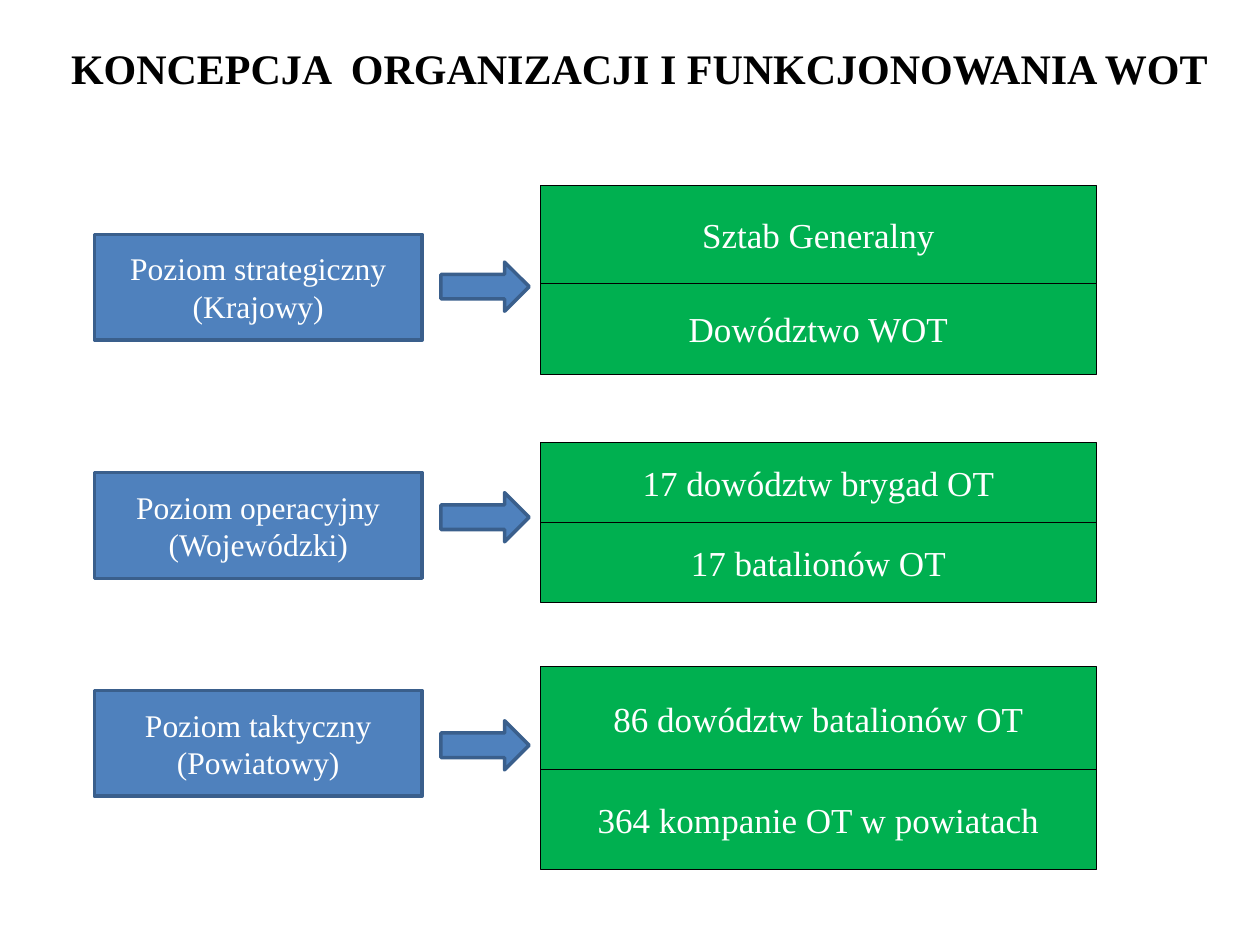
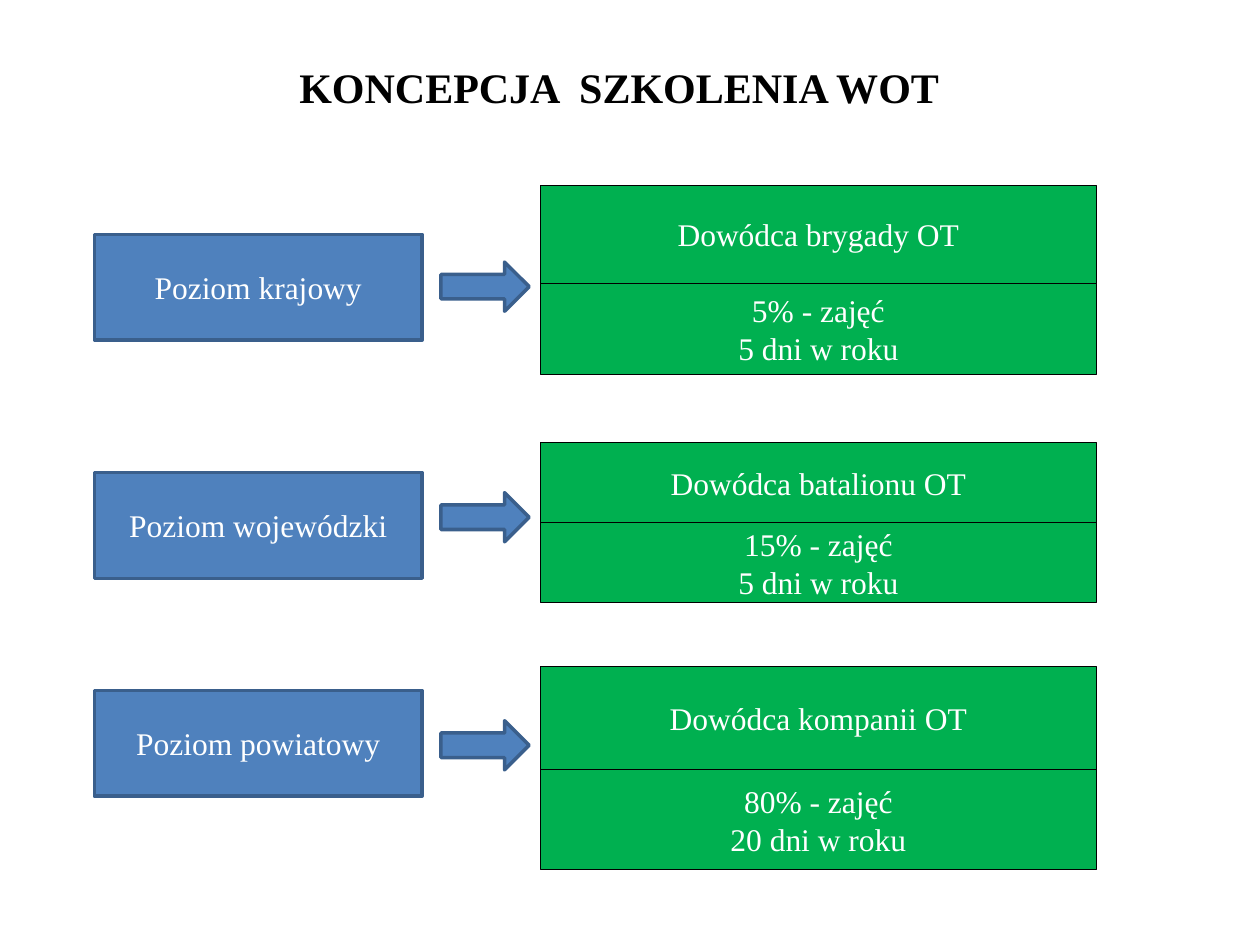
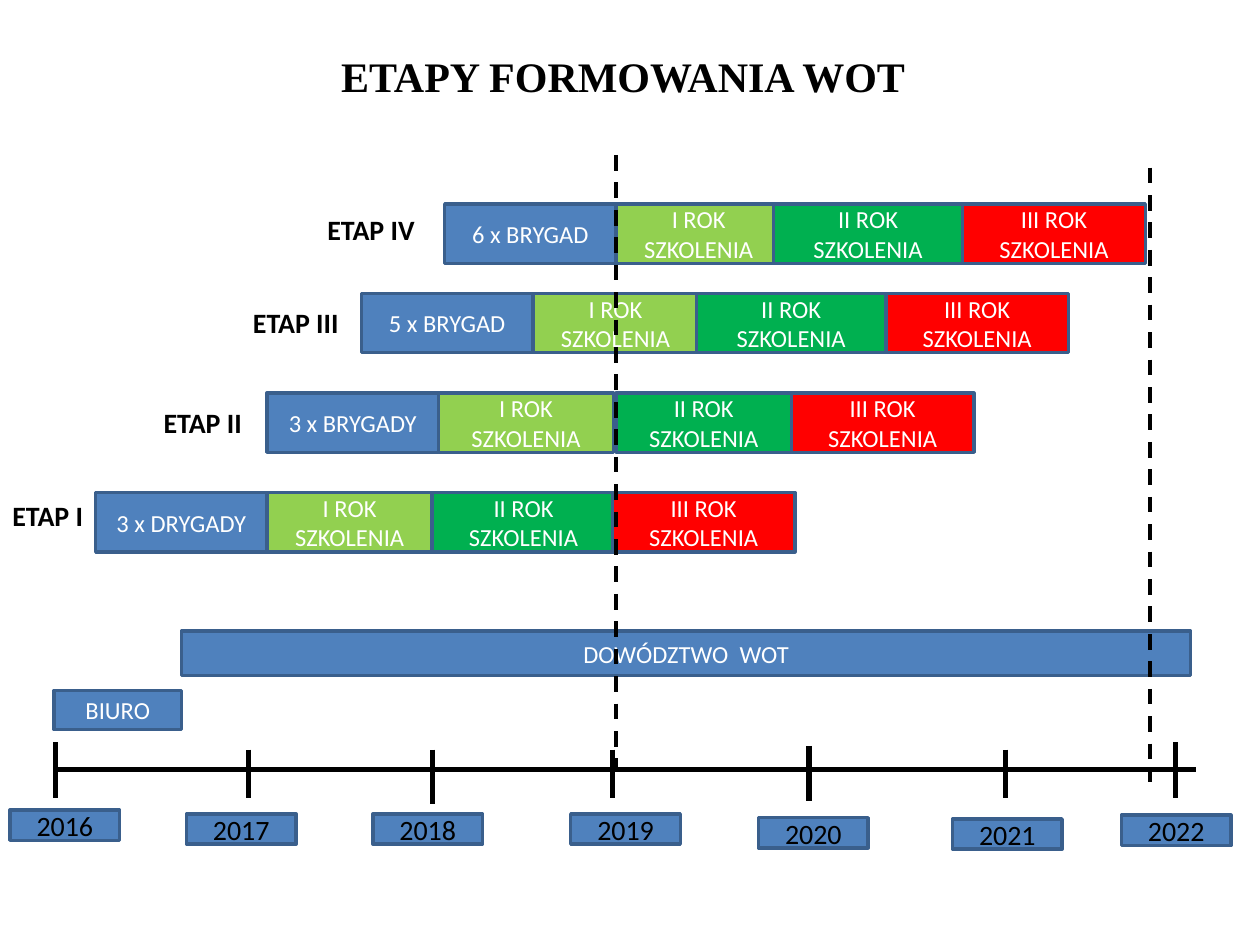
import pptx
import pptx.util
import pptx.dml.color
import pptx.enum.dml
import pptx.enum.shapes
import pptx.enum.text
import pptx.oxml.ns
from lxml import etree

Inches = pptx.util.Inches
Pt = pptx.util.Pt
SHAPES = pptx.enum.shapes.MSO_SHAPE
ALIGN = pptx.enum.text.PP_ALIGN
ANCHOR = pptx.enum.text.MSO_ANCHOR

# Shared look
BLUE, BLUE_EDGE = "4F81BD", "3A5F8C"
GREEN, LIME, RED = "00B050", "92D050", "FF0000"
WHITE, BLACK = "FFFFFF", "000000"
SERIF, SANS = "Times New Roman", "Calibri"


def rgb(value):
    return pptx.dml.color.RGBColor.from_string(value)


def write_text(shape, text, *, size, font=SANS, color=WHITE, bold=False,
               align=ALIGN.CENTER, anchor=ANCHOR.MIDDLE, wrap=True):
    frame = shape.text_frame
    frame.word_wrap = wrap
    frame.auto_size = pptx.enum.text.MSO_AUTO_SIZE.NONE
    frame.vertical_anchor = anchor
    frame.text = text
    for paragraph in frame.paragraphs:
        paragraph.alignment = align
        for run in paragraph.runs:
            run.font.name = font
            run.font.size = Pt(size)
            run.font.bold = bold
            run.font.color.rgb = rgb(color)


def add_block(slide, box, text="", kind=SHAPES.RECTANGLE, fill=BLUE,
              edge=BLUE_EDGE, edge_width=2, **text_format):
    block = slide.shapes.add_shape(kind, *map(Inches, box))
    block.shadow.inherit = False
    block.fill.solid()
    block.fill.fore_color.rgb = rgb(fill)
    block.line.color.rgb = rgb(edge)
    block.line.width = Pt(edge_width)
    if text:
        write_text(block, text, **text_format)


def add_line(slide, start, end, width=3, dashed=False):
    line = slide.shapes.add_connector(
        pptx.enum.shapes.MSO_CONNECTOR.STRAIGHT, *map(Inches, start + end))
    line.line.color.rgb = rgb(BLACK)
    line.line.width = Pt(width)
    if dashed:
        line.line.dash_style = pptx.enum.dml.MSO_LINE.DASH
    etree.SubElement(line._element.spPr, pptx.oxml.ns.qn("a:effectLst"))


def add_titled_slide(deck, title, box):
    slide = deck.slides.add_slide(deck.slide_layouts[5])
    heading = slide.shapes.title
    heading.left, heading.top, heading.width, heading.height = map(Inches, box)
    write_text(heading, title, size=24, font=SERIF, color=BLACK, bold=True,
               anchor=ANCHOR.TOP)
    return slide


# Levels of command: level box, arrow and two stacked green boxes.
# Each row: top, level offset, arrow offset, heights of the green boxes
LEVEL_ROWS = [
    (1.47, 0.39, 0.61, (0.78, 0.72)),
    (3.51, 0.24, 0.40, (0.64, 0.63)),
    (5.29, 0.19, 0.43, (0.82, 0.79)),
]


def draw_level(slide, left, row, level, details, detail_size):
    top, level_offset, arrow_offset, heights = row
    add_block(slide, (left, top + level_offset, 2.6, 0.84), level,
              size=18, font=SERIF)
    add_block(slide, (left + 2.75, top + arrow_offset, 0.7, 0.39),
              kind=SHAPES.RIGHT_ARROW)
    for detail, height in zip(details, heights):
        add_block(slide, (left + 3.54, top, 4.41, height), detail, fill=GREEN,
                  edge=BLACK, edge_width=0.75, size=detail_size, font=SERIF,
                  wrap=False)
        top += height


def build_levels_slide(deck, title, title_box, levels, detail_size):
    slide = add_titled_slide(deck, title, title_box)
    for row, (level, *details) in zip(LEVEL_ROWS, levels):
        draw_level(slide, 0.75, row, level, details, detail_size)


ORGANISATION = [
    ("Poziom strategiczny\n(Krajowy)", "Sztab Generalny", "Dowództwo WOT"),
    ("Poziom operacyjny\n(Wojewódzki)", "17 dowództw brygad OT",
     "17 batalionów OT"),
    ("Poziom taktyczny\n(Powiatowy)", "86 dowództw batalionów OT",
     "364 kompanie OT w powiatach"),
]
TRAINING = [
    ("Poziom krajowy", "Dowódca brygady OT", "5% - zajęć\n5 dni w roku"),
    ("Poziom wojewódzki", "Dowódca batalionu OT",
     "15% - zajęć\n5 dni w roku"),
    ("Poziom powiatowy", "Dowódca kompanii OT",
     "80% - zajęć\n20 dni w roku"),
]

# Stages: name, name position, brigades, bar position,
# then offset and width of each training year
STAGES = [
    ("ETAP I", (0, 3.91), "3 x DRYGADY", (0.76, 3.91),
     [(1.36, 1.31), (2.67, 1.45), (4.10, 1.45)]),
    ("ETAP II", (1.2, 3.17), "3 x BRYGADY", (2.12, 3.12),
     [(1.36, 1.39), (2.77, 1.39), (4.16, 1.45)]),
    ("ETAP III", (1.91, 2.38), "5 x BRYGAD", (2.87, 2.33),
     [(1.36, 1.31), (2.66, 1.5), (4.16, 1.45)]),
    ("ETAP IV", (2.5, 1.64), "6 x BRYGAD", (3.53, 1.62),
     [(1.36, 1.31), (2.61, 1.5), (4.11, 1.45)]),
]
TRAINING_YEARS = [("I", LIME), ("II", GREEN), ("III", RED)]

# Time axis: year, tick x, tick top and bottom, year box position
YEARS = [
    (2016, 0.44, 5.89, 6.33, (0.08, 6.43)),
    (2017, 1.97, 5.95, 6.33, (1.48, 6.46)),
    (2018, 3.43, 5.95, 6.38, (2.96, 6.46)),
    (2019, 4.86, 5.95, 6.33, (4.53, 6.46)),
    (2020, 6.42, 5.92, 6.36, (6.02, 6.49)),
    (2021, 7.98, 5.95, 6.33, (7.56, 6.5)),
    (2022, 9.33, 5.89, 6.33, (8.9, 6.47)),
]


def draw_stage_bar(slide, position, brigades, spans):
    left, top = position
    height = 0.47
    add_block(slide, (left, top, 1.36, height), brigades, size=14)
    for (numeral, color), (offset, width) in zip(TRAINING_YEARS, spans):
        add_block(slide, (left + offset, top, width, height),
                  f"{numeral} ROK SZKOLENIA", fill=color, size=14)


def draw_stage_name(slide, position, name):
    label = slide.shapes.add_textbox(*map(Inches, position + (1.14, 0.37)))
    write_text(label, name, size=16, color=BLACK, bold=True, align=ALIGN.LEFT,
               anchor=ANCHOR.TOP)


def draw_time_axis(slide, left, right, y):
    add_line(slide, (left, y), (right, y))
    for year, x, tick_top, tick_bottom, position in YEARS:
        add_line(slide, (x, tick_top), (x, tick_bottom))
        add_block(slide, position + (0.87, 0.24), str(year), size=16,
                  color=BLACK)


def build_stages_slide(deck):
    slide = add_titled_slide(deck, "ETAPY FORMOWANIA WOT",
                             (0.76, 0.35, 8.37, 0.5))
    draw_time_axis(slide, 0.43, 9.49, 6.11)
    # Command bodies
    add_block(slide, (1.44, 5.01, 8.01, 0.35), "DOWÓDZTWO  WOT", size=14)
    add_block(slide, (0.43, 5.48, 1.01, 0.31), "BIURO", size=14)
    # Formation stages
    for name, name_position, brigades, bar_position, spans in STAGES:
        draw_stage_bar(slide, bar_position, brigades, spans)
        draw_stage_name(slide, name_position, name)
    # Milestones
    for x, top in ((4.89, 1.23), (9.13, 1.33)):
        add_line(slide, (x, top), (x, top + 4.88), width=2.25, dashed=True)


def main():
    deck = pptx.Presentation()
    deck.slide_width, deck.slide_height = Inches(10), Inches(7.5)
    build_levels_slide(deck, "KONCEPCJA  ORGANIZACJI I FUNKCJONOWANIA WOT",
                       (0.43, 0.29, 9.29, 0.5), ORGANISATION, 20)
    build_levels_slide(deck, "KONCEPCJA  SZKOLENIA WOT",
                       (0.98, 0.44, 7.87, 0.5), TRAINING, 18)
    build_stages_slide(deck)
    deck.save("out.pptx")


if __name__ == "__main__":
    main()
